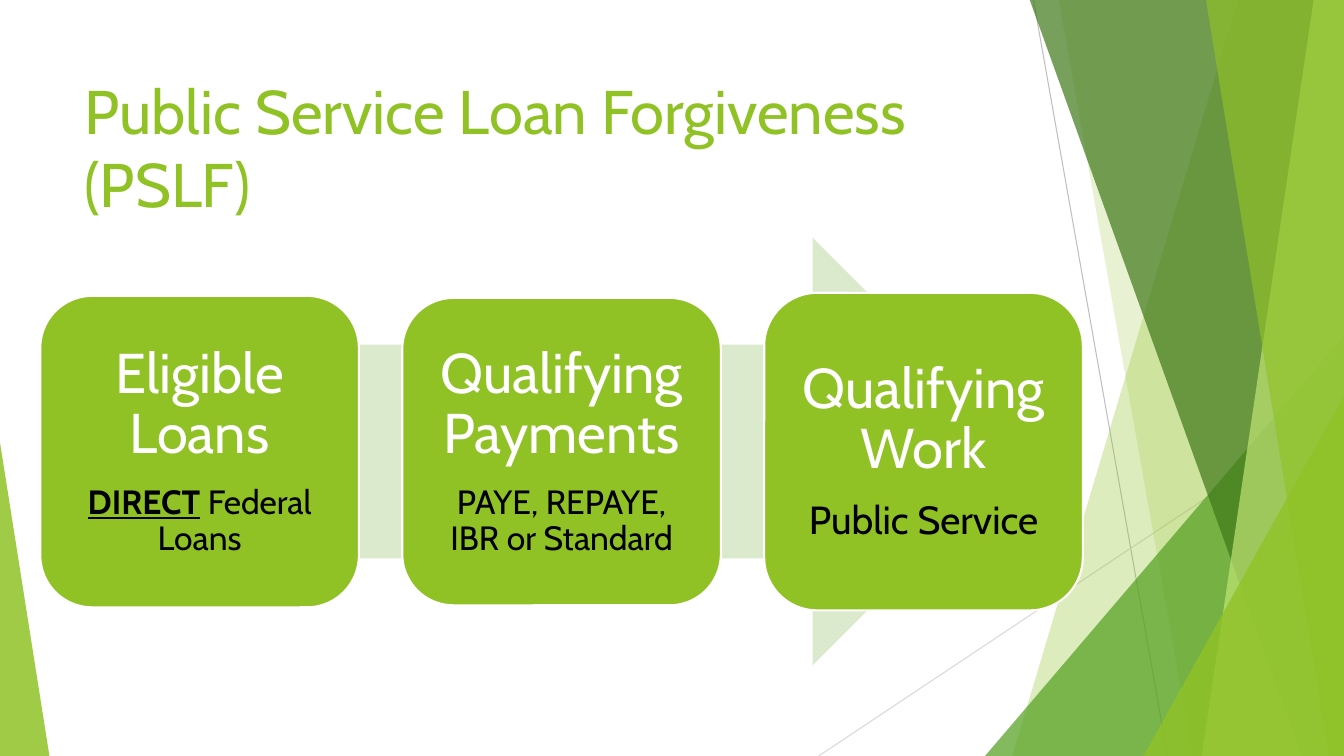
from dataclasses import dataclass

from lxml import etree
from pptx import Presentation
from pptx.dml.color import RGBColor
from pptx.enum import shapes, text
from pptx.oxml import ns
from pptx.util import Inches, Pt


@dataclass(frozen=True)
class Theme:
    font: str = "Cabin"
    lime: str = "90C226"
    leaf: str = "54A021"
    moss: str = "3F7819"
    pale: str = "C0E474"
    mist: str = "DBE9CD"
    white: str = "FFFFFF"
    black: str = "000000"
    title: int = 44
    head: int = 40


@dataclass(frozen=True)
class Ray:
    x1: float
    y1: float
    x2: float
    y2: float
    tone: str


@dataclass(frozen=True)
class Band:
    top: float
    foot: float
    tone: str
    alpha: int


@dataclass(frozen=True)
class Wedge:
    left: float
    top: float
    width: float
    peak: int
    tone: str
    alpha: int


@dataclass(frozen=True)
class Run:
    words: str
    size: int
    tone: str
    bold: bool = False
    under: bool = False


@dataclass(frozen=True)
class Card:
    height: float
    head: str
    body: tuple[Run, ...]


LOOK = Theme()
WIDE, HIGH, EDGE = 13.33, 7.5, -0.01
SIDE, START, STEP, MID = 3.16, 0.4, 3.59, 4.48

RAYS = (
    Ray(10.25, 0, 11.58, HIGH, "BFBFBF"),
    Ray(WIDE, 4.03, 8.12, HIGH, "D9D9D9"),
)
FACETS = (
    Band(12.28, 10.04, LOOK.lime, 30),
    Band(10.5, 11.83, LOOK.lime, 20),
    Wedge(9.77, 3.33, 3.56, 1, LOOK.leaf, 72),
    Band(10.21, 12.91, LOOK.moss, 70),
    Band(13.03, 11.92, LOOK.pale, 70),
    Band(11.96, 13.18, LOOK.lime, 65),
    Wedge(11.34, 3.93, 1.99, 1, LOOK.lime, 80),
    Wedge(0, 4.39, 0.49, 0, LOOK.lime, 85),
)
CARDS = (
    Card(3.09, "Eligible Loans", (
        Run("DIRECT", 24, LOOK.black, True, True),
        Run(" ", 24, LOOK.black, True),
        Run("Federal Loans", 24, LOOK.black),
    )),
    Card(3.05, "Qualifying Payments", (
        Run("PAYE, REPAYE, IBR or Standard", 24, LOOK.black),
    )),
    Card(3.15, "Qualifying Work", (Run("Public Service", 28, LOOK.black),)),
)


def assign(item, values: dict) -> None:
    for name, value in values.items():
        setattr(item, name, value)


def paint(shape, tone: str, alpha: int = 100) -> None:
    shape.shadow.inherit = False
    shape.fill.solid()
    shape.fill.fore_color.rgb = RGBColor.from_string(tone)
    shape.line.fill.background()
    if alpha < 100:
        color = shape.fill._xPr.find(".//" + ns.qn("a:srgbClr"))
        etree.SubElement(color, ns.qn("a:alpha"), val=str(alpha * 1000))


def stroke(line, tone: str, width: float) -> None:
    line.color.rgb = RGBColor.from_string(tone)
    line.width = Pt(width)


def place(slide, kind, left: float, top: float, width: float, height: float):
    box = map(Inches, (left, top, width, height))
    return slide.shapes.add_shape(kind, *box)


def draw_ray(slide, ray: Ray) -> None:
    ends = map(Inches, (ray.x1, ray.y1, ray.x2, ray.y2))
    line = slide.shapes.add_connector(shapes.MSO_CONNECTOR.STRAIGHT, *ends)
    stroke(line.line, ray.tone, 0.75)
    etree.SubElement(line._element.spPr, ns.qn("a:effectLst"))


def draw_band(slide, band: Band) -> None:
    pen = slide.shapes.build_freeform(Inches(band.top), Inches(EDGE))
    rest = ((WIDE, EDGE), (WIDE, HIGH), (band.foot, HIGH))
    pen.add_line_segments([(Inches(x), Inches(y)) for x, y in rest])
    paint(pen.convert_to_shape(), band.tone, band.alpha)


def draw_wedge(slide, wedge: Wedge) -> None:
    shape = place(slide, shapes.MSO_SHAPE.ISOSCELES_TRIANGLE,
                  wedge.left, wedge.top, wedge.width, HIGH - wedge.top)
    shape.adjustments[0] = wedge.peak
    paint(shape, wedge.tone, wedge.alpha)


def write(para, runs: tuple[Run, ...]) -> None:
    for part in runs:
        run = para.add_run()
        run.text = part.words
        assign(run.font, {
            "name": LOOK.font, "size": Pt(part.size),
            "bold": part.bold, "underline": part.under,
        })
        run.font.color.rgb = RGBColor.from_string(part.tone)


def draw_title(slide) -> None:
    box = slide.shapes.add_textbox(*map(Inches, (0.74, 0.67, 9.4, 1.44)))
    frame = box.text_frame
    assign(frame, {"word_wrap": True, "vertical_anchor": text.MSO_ANCHOR.TOP})
    words = "Public Service Loan Forgiveness (PSLF)"
    write(frame.paragraphs[0], (Run(words, LOOK.title, LOOK.lime),))


def draw_card(slide, card: Card, left: float) -> None:
    shape = place(slide, shapes.MSO_SHAPE.ROUNDED_RECTANGLE,
                  left, MID - card.height / 2, SIDE, card.height)
    paint(shape, LOOK.lime)
    stroke(shape.line, LOOK.white, 1.5)
    frame = shape.text_frame
    sides = ("left", "top", "right", "bottom")
    assign(frame, {f"margin_{side}": Inches(0.17) for side in sides})
    assign(frame, {"word_wrap": True, "vertical_anchor": text.MSO_ANCHOR.MIDDLE})
    head = (Run(card.head, LOOK.head, LOOK.white),)
    paras = (frame.paragraphs[0], frame.add_paragraph())
    for para, runs in zip(paras, (head, card.body)):
        assign(para, {
            "alignment": text.PP_ALIGN.CENTER, "line_spacing": 0.9,
            "space_after": Pt(round(runs[0].size * 0.35)),
        })
        write(para, runs)


def main() -> None:
    deck = Presentation()
    assign(deck, {"slide_width": Inches(WIDE), "slide_height": Inches(HIGH)})
    slide = deck.slides.add_slide(deck.slide_layouts[6])
    for ray in RAYS:
        draw_ray(slide, ray)
    for facet in FACETS:
        if isinstance(facet, Band):
            draw_band(slide, facet)
        else:
            draw_wedge(slide, facet)
    draw_title(slide)
    arrow = place(slide, shapes.MSO_SHAPE.RIGHT_ARROW, 0.95, 2.36, 9.23, 4.24)
    paint(arrow, LOOK.mist)
    for index, card in enumerate(CARDS):
        draw_card(slide, card, START + index * STEP)
    deck.save("out.pptx")


if __name__ == "__main__":
    main()
